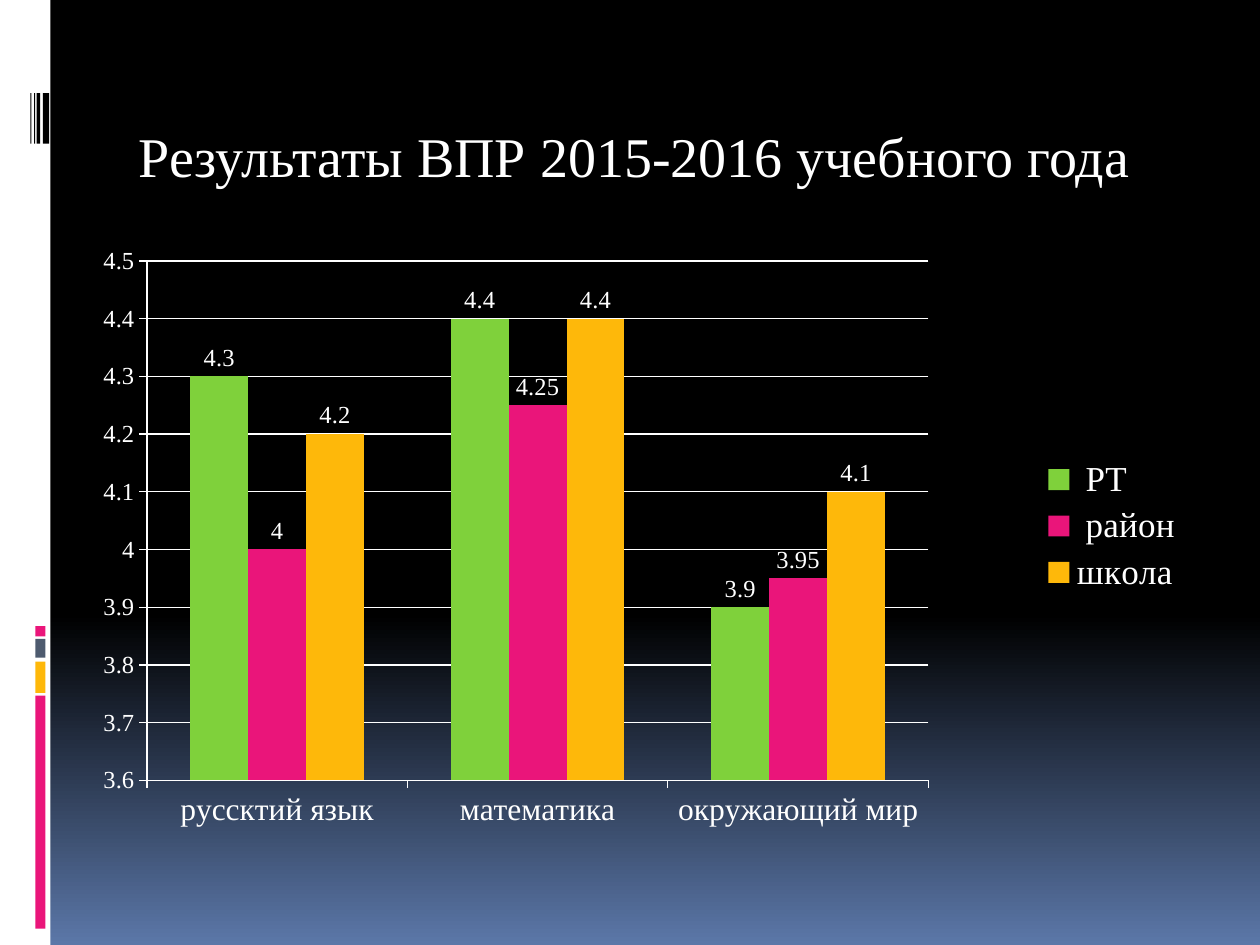
from dataclasses import dataclass

from lxml import etree
from pptx import Presentation
from pptx.chart.data import CategoryChartData
from pptx.dml.color import RGBColor
from pptx.enum.chart import XL_CHART_TYPE, XL_LABEL_POSITION, XL_LEGEND_POSITION, XL_TICK_MARK
from pptx.enum.shapes import MSO_SHAPE
from pptx.enum.text import MSO_ANCHOR, PP_ALIGN
from pptx.oxml.ns import qn
from pptx.util import Inches, Pt

COLUMNS = XL_CHART_TYPE.COLUMN_CLUSTERED
LABEL_ABOVE = XL_LABEL_POSITION.OUTSIDE_END
LEGEND_RIGHT = XL_LEGEND_POSITION.RIGHT
TICK_OUTSIDE = XL_TICK_MARK.OUTSIDE
RECTANGLE = MSO_SHAPE.RECTANGLE
BOTTOM = MSO_ANCHOR.BOTTOM
LEFT = PP_ALIGN.LEFT
TITLE_ONLY = 5


@dataclass(frozen=True)
class Theme:
    """Colours, typefaces and type sizes of the deck."""
    white: str = "FFFFFF"
    black: str = "000000"
    blue: str = "5B77A8"
    slate: str = "4E5B6F"
    green: str = "7FD13B"
    pink: str = "EA157A"
    amber: str = "FEB80A"
    text_font: str = "Times New Roman"
    chart_font: str = "Cabin"
    title_size: int = 32
    legend_size: int = 20
    category_size: int = 18
    value_size: int = 14
    chart_size: int = 10


class SlideBuilder:
    """Draws styled elements on the current slide."""

    def __init__(self, slide, theme):
        self.slide = slide
        self.theme = theme

    def style_font(self, font, size, name=None):
        font.name = name or self.theme.text_font
        font.size = Pt(size)
        font.bold = False
        font.color.rgb = RGBColor.from_string(self.theme.white)

    def background(self, stops, angle):
        fill = self.slide.background.fill
        fill.gradient()
        fill.gradient_angle = angle
        for stop, (position, color) in zip(fill.gradient_stops, stops):
            stop.position = position
            stop.color.rgb = RGBColor.from_string(color)

    def bar(self, left, top, width, height, color):
        box = self.slide.shapes.add_shape(
            RECTANGLE, Inches(left), Inches(top), Inches(width), Inches(height))
        box.shadow.inherit = False
        box.fill.solid()
        box.fill.fore_color.rgb = RGBColor.from_string(color)
        box.line.fill.background()

    def title(self, text, left, top, width, height):
        box = self.slide.shapes.title
        box.left, box.top, box.width, box.height = map(Inches, (left, top, width, height))
        frame = box.text_frame
        frame.text = text
        frame.word_wrap = True
        frame.vertical_anchor = BOTTOM
        para = frame.paragraphs[0]
        para.alignment = LEFT
        self.style_font(para.font, self.theme.title_size)

    def axis(self, axis, size):
        axis.major_tick_mark = TICK_OUTSIDE
        self.style_font(axis.tick_labels.font, size)
        self.line(axis.format.line)

    def line(self, line):
        line.width = Pt(0.75)
        line.color.rgb = RGBColor.from_string(self.theme.white)

    def plot_area(self, chart, x, y, w, h):
        area = chart.plots[0]._element.getparent()
        for layout in area.findall(qn("c:layout")):
            area.remove(layout)
        layout = etree.Element(qn("c:layout"))
        manual = etree.SubElement(layout, qn("c:manualLayout"))
        settings = {"layoutTarget": "inner", "xMode": "edge", "yMode": "edge",
                    "x": x, "y": y, "w": w, "h": h}
        for tag, value in settings.items():
            etree.SubElement(manual, qn(f"c:{tag}")).set("val", str(value))
        area.insert(0, layout)

    def column_chart(self, categories, series, left, top, width, height):
        theme = self.theme
        data = CategoryChartData()
        data.categories = categories
        for name, values, _ in series:
            data.add_series(name, values)
        chart = self.slide.shapes.add_chart(
            COLUMNS, Inches(left), Inches(top), Inches(width), Inches(height), data).chart
        chart.has_title = False
        self.style_font(chart.font, theme.chart_size, theme.chart_font)
        chart.has_legend = True
        chart.legend.position = LEGEND_RIGHT
        chart.legend.include_in_layout = False
        self.style_font(chart.legend.font, theme.legend_size)

        self.axis(chart.category_axis, theme.category_size)
        values_axis = chart.value_axis
        self.axis(values_axis, theme.value_size)
        values_axis.minimum_scale, values_axis.maximum_scale = 3.6, 4.5
        values_axis.major_unit = 0.1
        self.line(values_axis.major_gridlines.format.line)

        plot = chart.plots[0]
        plot.gap_width, plot.overlap = 150, 0
        plot.vary_by_categories = False
        for column, (_, _, color) in zip(plot.series, series):
            column.format.fill.solid()
            column.format.fill.fore_color.rgb = RGBColor.from_string(color)
            labels = column.data_labels
            labels.show_value = True
            labels.position = LABEL_ABOVE
            self.style_font(labels.font, theme.value_size)
        self.plot_area(chart, 0.073, 0.075, 0.69, 0.833)


def main():
    theme = Theme()
    deck = Presentation()
    deck.slide_width, deck.slide_height = Inches(10), Inches(7.5)
    page = SlideBuilder(deck.slides.add_slide(deck.slide_layouts[TITLE_ONLY]), theme)

    page.background([(0.65, theme.black), (1, theme.blue)], 270)
    page.bar(0, 0, 0.4, 7.5, theme.white)
    for left, width in [(0.34, 0.05), (0.29, 0.03), (0.27, 0.01), (0.24, 0.01)]:
        page.bar(left, 0.74, width, 0.4, theme.black)
    side_blocks = [(5.52, 1.85, theme.pink), (5.25, 0.25, theme.amber),
                   (5.07, 0.15, theme.slate), (4.97, 0.08, theme.pink)]
    for top, height, color in side_blocks:
        page.bar(0.28, top, 0.08, height, color)

    page.title("Результаты ВПР 2015-2016 учебного года", 1, 0.29, 8.5, 1.26)
    page.column_chart(
        ["руссктий язык", "математика", "окружающий мир"],
        [(" РТ", (4.3, 4.4, 3.9), theme.green),
         (" район", (4, 4.25, 3.95), theme.pink),
         ("школа", (4.2, 4.4, 4.1), theme.amber)],
        0.51, 1.7, 8.99, 4.95)
    deck.save("out.pptx")


if __name__ == "__main__":
    main()
